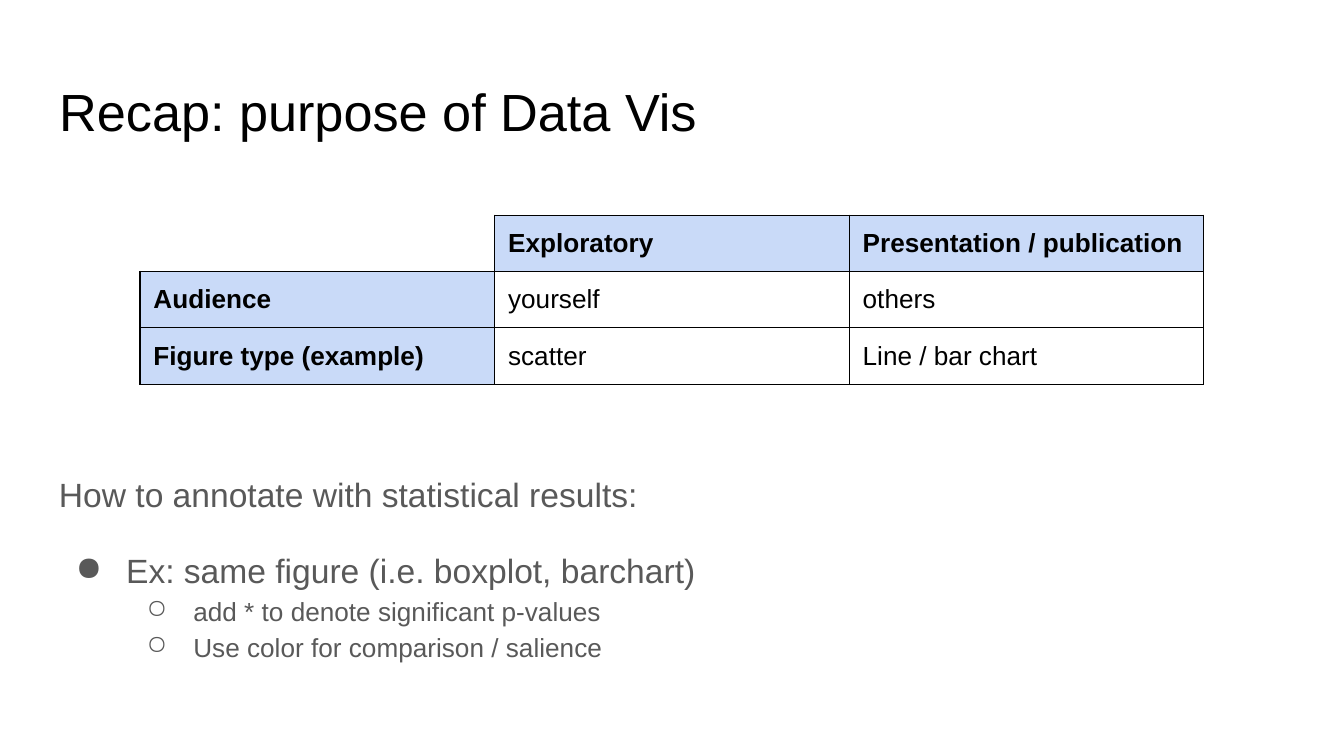
from dataclasses import dataclass

from lxml.etree import SubElement
from pptx import Presentation
from pptx.dml.color import RGBColor as Rgb
from pptx.enum.text import MSO_ANCHOR as Anchor, MSO_AUTO_SIZE as AutoSize, PP_ALIGN as Align
from pptx.oxml.ns import qn
from pptx.util import Pt


@dataclass(frozen=True)
class Theme:
    """Colours, font and type sizes of the slide."""
    font: str = "Arial"
    ink: str = "000000"
    muted: str = "595959"
    header: str = "C9DAF8"
    title_size: int = 28
    body_size: int = 18
    small_size: int = 14
    inset: float = 7.2
    border: float = 0.75


def apply_format(target, values):
    """Set each named attribute on the target."""
    for name, value in values.items():
        setattr(target, name, value)


class SlideBuilder:
    """Draws the elements of one slide in a theme."""

    def __init__(self, deck, theme):
        """Add a title-only slide to the deck."""
        self.theme = theme
        self.slide = deck.slides.add_slide(deck.slide_layouts[5])

    def add_text(self, paragraph, text, size, color, bold=False):
        """Add a styled run to a paragraph."""
        run = paragraph.add_run()
        run.text = text
        apply_format(run.font, {"name": self.theme.font, "size": Pt(size), "bold": bold})
        run.font.color.rgb = Rgb.from_string(color)

    def margins(self):
        """Return equal insets for all four sides."""
        return {f"margin_{side}": Pt(self.theme.inset) for side in ("left", "right", "top", "bottom")}

    def frame(self, shape):
        """Format the text frame of a shape and return it."""
        apply_format(shape.text_frame, {
            "word_wrap": True, "auto_size": AutoSize.NONE,
            "vertical_anchor": Anchor.TOP, **self.margins()})
        return shape.text_frame

    def title(self, text, left, top, width, height):
        """Place and fill the title placeholder."""
        heading = self.slide.shapes.title
        apply_format(heading, {"left": Pt(left), "top": Pt(top), "width": Pt(width), "height": Pt(height)})
        paragraph = self.frame(heading).paragraphs[0]
        paragraph.alignment = Align.LEFT
        self.add_text(paragraph, text, self.theme.title_size, self.theme.ink)

    def outline(self, items, left, top, width, height):
        """Add a text box of (text, depth, space before) items."""
        theme = self.theme
        levels = {
            0: (theme.body_size, None, 0, 0),
            1: (theme.body_size, "●", 36, -27),
            2: (theme.small_size, "○", 72, -25),
        }
        frame = self.frame(self.slide.shapes.add_textbox(Pt(left), Pt(top), Pt(width), Pt(height)))
        for index, (text, depth, space) in enumerate(items):
            size, bullet, margin, indent = levels[depth]
            paragraph = frame.add_paragraph() if index else frame.paragraphs[0]
            apply_format(paragraph, {"level": max(depth - 1, 0), "line_spacing": 1.15, "space_before": Pt(space)})
            if bullet:
                properties = paragraph._p.get_or_add_pPr()
                properties.set("marL", str(Pt(margin)))
                properties.set("indent", str(Pt(indent)))
                bullet_color = SubElement(properties, qn("a:buClr"))
                SubElement(bullet_color, qn("a:srgbClr"), val=theme.muted)
                SubElement(properties, qn("a:buChar"), char=bullet)
            self.add_text(paragraph, text, size, theme.muted)

    def borders(self, cell, hidden=""):
        """Draw the cell borders, leaving out the hidden sides."""
        properties = cell._tc.get_or_add_tcPr()
        for side in "LRTB":
            line = SubElement(properties, qn(f"a:ln{side}"), w=str(Pt(self.theme.border)))
            if side in hidden:
                SubElement(line, qn("a:noFill"))
            else:
                fill = SubElement(line, qn("a:solidFill"))
                SubElement(fill, qn("a:srgbClr"), val=self.theme.ink)

    def table(self, rows, left, top, column_width, row_height):
        """Add a table with a header row, a header column and an open corner."""
        row_count, column_count = len(rows), len(rows[0])
        grid = self.slide.shapes.add_table(
            row_count, column_count, Pt(left), Pt(top),
            Pt(column_width * column_count), Pt(row_height * row_count)).table
        apply_format(grid, {"first_row": False, "horz_banding": False})
        for r, row in enumerate(rows):
            for c, text in enumerate(row):
                cell = grid.cell(r, c)
                self.borders(cell, hidden="" if text else "LT")
                if not text:
                    cell.fill.background()
                    continue
                is_header = r == 0 or c == 0
                if is_header:
                    cell.fill.solid()
                    cell.fill.fore_color.rgb = Rgb.from_string(self.theme.header)
                else:
                    cell.fill.background()
                apply_format(cell, self.margins())
                self.add_text(cell.text_frame.paragraphs[0], text,
                              self.theme.small_size, self.theme.ink, is_header)


def main():
    """Build and save the recap slide."""
    deck = Presentation()
    apply_format(deck, {"slide_width": Pt(720), "slide_height": Pt(405)})
    recap = SlideBuilder(deck, Theme())
    recap.title("Recap: purpose of Data Vis", 24.5, 35, 671, 45)
    recap.outline([
        ("How to annotate with statistical results:", 0, 0),
        ("Ex: same figure (i.e. boxplot, barchart)", 1, 16),
        ("add * to denote significant p-values", 2, 0),
        ("Use color for comparison / salience", 2, 0),
    ], 24.5, 243.5, 671, 105)
    recap.table([
        ("", "Exploratory", "Presentation / publication"),
        ("Audience", "yourself", "others"),
        ("Figure type (example)", "scatter", "Line / bar chart"),
    ], 75, 115.3, 190, 30)
    deck.save("out.pptx")


if __name__ == "__main__":
    main()
